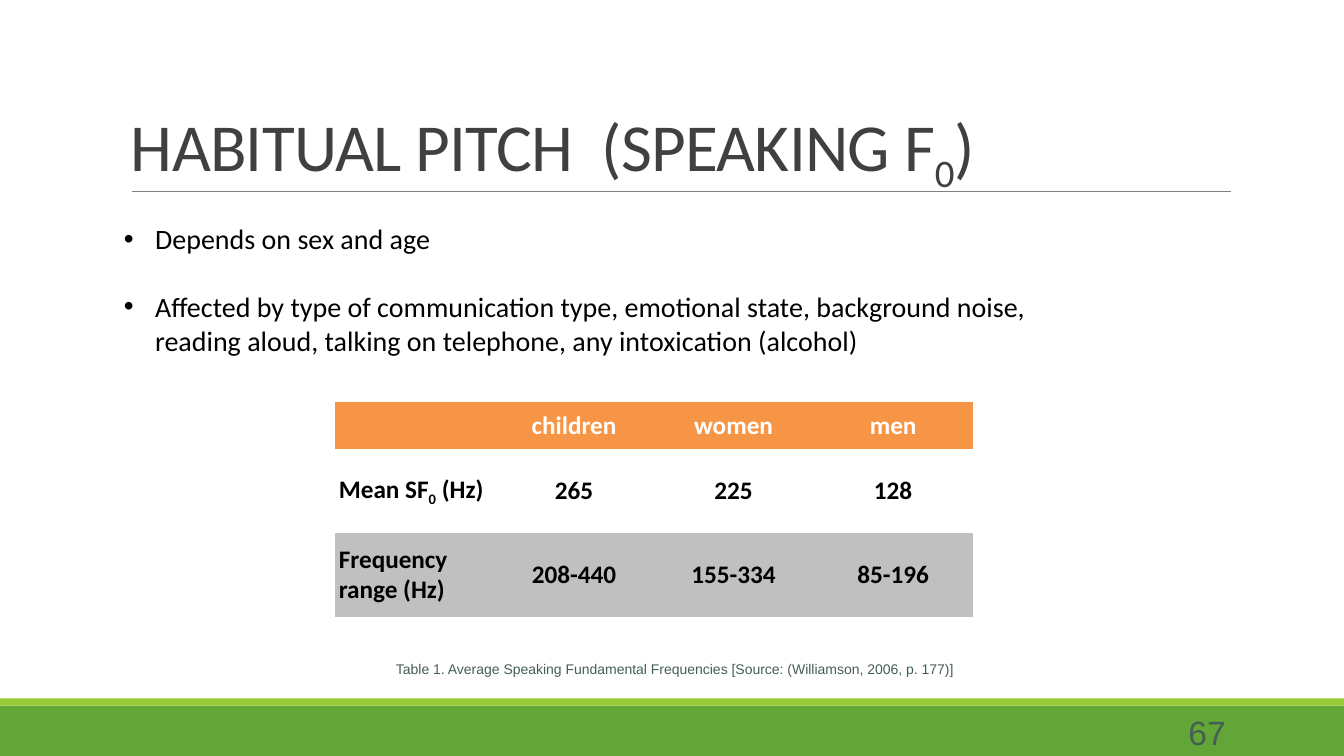
from lxml.etree import SubElement
from pptx import Presentation
from pptx.dml.color import RGBColor
from pptx.enum.shapes import MSO_CONNECTOR, MSO_SHAPE
from pptx.enum.text import MSO_ANCHOR, PP_ALIGN
from pptx.oxml.ns import qn
from pptx.util import Cm, Pt

GREEN = RGBColor(0x63, 0xA5, 0x37)
LIME = RGBColor(0x99, 0xCB, 0x38)
GRAY = RGBColor(0x80, 0x80, 0x80)
DARK = RGBColor(0x40, 0x40, 0x40)
PINE = RGBColor(0x45, 0x5F, 0x51)
ORANGE = RGBColor(0xF6, 0x95, 0x45)
SILVER = RGBColor(0xC0, 0xC0, 0xC0)
BLACK = RGBColor(0, 0, 0)
WHITE = RGBColor(0xFF, 0xFF, 0xFF)
WIDTH, HEIGHT = 33.87, 19.05
PLAIN_GRID = "{2D5ABB26-0587-4C30-8999-92F81FD0307C}"


class Deck:
    body = "Calibri"
    small = "Arial"

    def __init__(self):
        self.show = Presentation()
        self.show.slide_width = Cm(WIDTH)
        self.show.slide_height = Cm(HEIGHT)
        self.slide = self.show.slides.add_slide(self.show.slide_layouts[6])

    def band(self, top, height, color):
        shape = self.slide.shapes.add_shape(
            MSO_SHAPE.RECTANGLE, 0, Cm(top), Cm(WIDTH), Cm(height))
        shape.shadow.inherit = False
        shape.fill.solid()
        shape.fill.fore_color.rgb = color
        shape.line.fill.background()

    def rule(self, left, right, top):
        line = self.slide.shapes.add_connector(
            MSO_CONNECTOR.STRAIGHT, Cm(left), Cm(top), Cm(right), Cm(top))
        line.line.color.rgb = GRAY
        line.line.width = Pt(0.5)
        SubElement(line._element.spPr, qn("a:effectLst"))

    def style(self, para, size, color, font=None, bold=False):
        for run in para.runs:
            run.font.name = font or self.body
            run.font.size = Pt(size)
            run.font.color.rgb = color
            run.font.bold = bold

    def formula(self, para, parts):
        for part in parts:
            para.add_run().text = part
        para.runs[1].font._element.set("baseline", "-25000")

    def box(self, left, top, width, height, anchor=MSO_ANCHOR.TOP):
        frame = self.slide.shapes.add_textbox(
            Cm(left), Cm(top), Cm(width), Cm(height)).text_frame
        frame.word_wrap = True
        frame.vertical_anchor = anchor
        return frame

    def title(self, parts, *place):
        para = self.box(*place, MSO_ANCHOR.BOTTOM).paragraphs[0]
        para.line_spacing = 0.85
        self.formula(para, parts)
        self.style(para, 48, DARK)
        for run in para.runs:
            run.font._element.set("spc", "-50")

    def label(self, text, size, *place, anchor=MSO_ANCHOR.TOP, align=PP_ALIGN.LEFT):
        frame = self.box(*place, anchor)
        frame.text = text
        frame.paragraphs[0].alignment = align
        self.style(frame.paragraphs[0], size, PINE, self.small)

    def bullets(self, items, *place):
        frame = self.box(*place, MSO_ANCHOR.MIDDLE)
        frame.margin_top = Cm(0.43)
        for index, item in enumerate(items):
            para = frame.add_paragraph() if index else frame.paragraphs[0]
            para.text = item
            props = para._p.get_or_add_pPr()
            props.set("marL", str(Cm(0.79)))
            props.set("indent", str(-Cm(0.79)))
            if index:
                para.space_before = Pt(24.5)
            SubElement(props, qn("a:buFont"), typeface=self.small)
            SubElement(props, qn("a:buChar"), char="•")
            self.style(para, 20, BLACK)

    def table(self, rows, tall, fills, *place):
        grid = self.slide.shapes.add_table(
            len(rows), len(rows[0]), *map(Cm, place)).table
        grid._tbl.tblPr[0].text = PLAIN_GRID
        for r, row in enumerate(rows):
            grid.rows[r].height = Cm(tall[r])
            for c, text in enumerate(row):
                self.cell(grid.cell(r, c), text, fills[r],
                          BLACK if r else WHITE,
                          PP_ALIGN.CENTER if c else PP_ALIGN.LEFT)

    def cell(self, cell, text, fill, color, align):
        cell.margin_left = cell.margin_right = Cm(0.1)
        cell.margin_top = cell.margin_bottom = Cm(0.1)
        cell.vertical_anchor = MSO_ANCHOR.MIDDLE
        if fill:
            cell.fill.solid()
            cell.fill.fore_color.rgb = fill
        else:
            cell.fill.background()
        para = cell.text_frame.paragraphs[0]
        if isinstance(text, tuple):
            self.formula(para, text)
        else:
            para.text = text
        para.alignment = align
        self.style(para, 18, color, bold=True)


def main():
    deck = Deck()
    deck.band(17.78, 1.27, GREEN)
    deck.band(17.6, 0.18, LIME)
    deck.rule(3.33, 31.01, 4.83)
    deck.title(("HABITUAL PITCH  (SPEAKING F", "0", ")"), 3.05, 0.79, 27.94, 4.04)
    deck.table(
        [
            ("", "children", "women", "men"),
            (("Mean SF", "0", " (Hz)"), "265", "225", "128"),
            ("Frequency range (Hz)", "208-440", "155-334", "85-196"),
        ],
        (1.19, 2.11, 2.11), (ORANGE, None, SILVER), 8.44, 10.13, 16.08, 5.41)
    deck.label("67", 24, 27.51, 17.93, 3.63, 1.02,
               anchor=MSO_ANCHOR.MIDDLE, align=PP_ALIGN.RIGHT)
    deck.bullets(
        (
            "Depends on sex and age",
            "Affected by type of communication type, emotional state, "
            "background noise, reading aloud, talking on telephone, "
            "any intoxication (alcohol)",
        ),
        2.87, 4.57, 23.98, 5.13)
    deck.label("Table 1. Average Speaking Fundamental Frequencies "
               "[Source: (Williamson, 2006, p. 177)]",
               10, 9.73, 16.51, 19.89, 1.7)
    deck.show.save("out.pptx")


if __name__ == "__main__":
    main()
